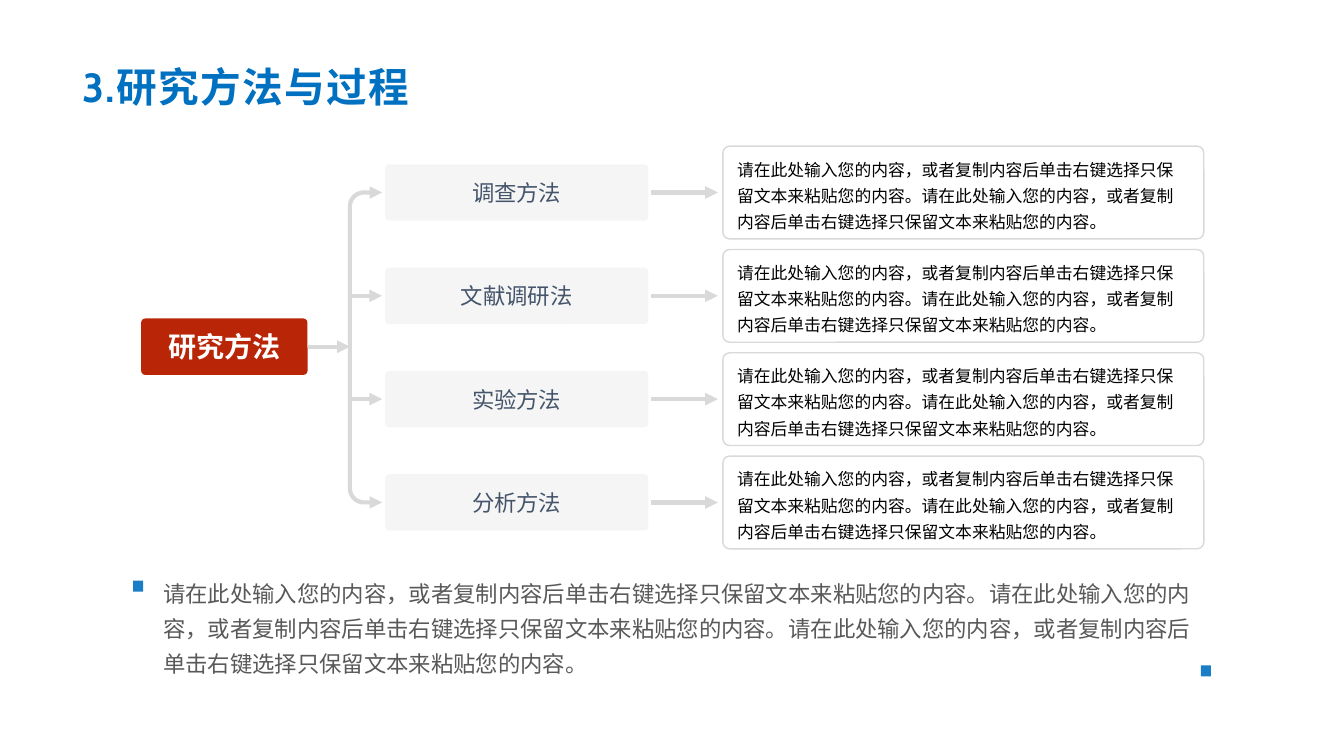
from math import cos, pi, sin

from lxml.etree import SubElement
from pptx import Presentation
from pptx.dml.color import RGBColor
from pptx.enum.shapes import MSO_CONNECTOR as CONN, MSO_SHAPE as SHAPE
from pptx.enum.text import MSO_ANCHOR as ANCHOR, PP_ALIGN as ALIGN
from pptx.oxml.ns import qn
from pptx.util import Inches, Pt

COLORS = {
    "blue": "0070C0", "red": "B92507", "white": "FFFFFF", "black": "000000",
    "pale": "F2F2F2", "line": "D9D9D9", "slate": "44546A", "gray": "595959",
}
SENTENCE = "请在此处输入您的内容，或者复制内容后单击右键选择只保留文本来粘贴您的内容。"
METHODS = ["调查方法", "文献调研法", "实验方法", "分析方法"]
FIRST_Y, ROW_STEP = 1.91, 1.025  # centre of the first row, row pitch
TRUNK_X, BRANCH_X = 3.47, 3.79
BEND = 0.14


class Builder:
    def __init__(self, slide, font="Cabin", cjk_font="Noto Sans CJK JP"):
        self.s = slide
        self.font, self.cjk_font = font, cjk_font

    def rgb(self, name):
        return RGBColor.from_string(COLORS[name])

    def add_run(self, sp, text, size, color, font=None, bold=False, align=ALIGN.LEFT,
                anchor=ANCHOR.TOP, spacing=None, tracking=None, insets=(0, 0)):
        tf = sp.text_frame
        tf.word_wrap = True
        tf.vertical_anchor = anchor
        tf.margin_left = tf.margin_right = Inches(insets[0])
        tf.margin_top = tf.margin_bottom = Inches(insets[1])
        p = tf.paragraphs[0]
        p.alignment = align
        if spacing:
            p.line_spacing = spacing
        r = p.add_run()
        r.text = text
        r.font.size, r.font.bold = Pt(size), bold
        r.font.name = font or self.font
        r.font.color.rgb = self.rgb(color)
        rPr = r.font._element
        SubElement(rPr, qn("a:ea"), typeface=self.font)
        if tracking:
            rPr.set("spc", str(tracking * 100))

    def text(self, x, y, w, h, text, size, color, **style):
        sp = self.s.shapes.add_textbox(Inches(x), Inches(y), Inches(w), Inches(h))
        self.add_run(sp, text, size, color, **style)

    def box(self, kind, x, y, w, h, fill=None, alpha=None, line=None):
        sp = self.s.shapes.add_shape(kind, Inches(x), Inches(y), Inches(w), Inches(h))
        sp.shadow.inherit = False
        if kind == SHAPE.ROUNDED_RECTANGLE:
            sp.adjustments[0] = 0.072
        if fill:
            sp.fill.solid()
            sp.fill.fore_color.rgb = self.rgb(fill)
        else:
            sp.fill.background()
        if alpha:
            clr = sp.fill._xPr.find(".//" + qn("a:srgbClr"))
            SubElement(clr, qn("a:alpha"), val=str(alpha * 1000))
        if line:
            sp.line.color.rgb = self.rgb(line)
            sp.line.width = Pt(1)
        else:
            sp.line.fill.background()
        return sp

    def stroke(self, sp, ends):
        sp.line.color.rgb = self.rgb("line")
        sp.line.width = Pt(3)
        for end in ends:
            SubElement(sp.line._get_or_add_ln(), qn("a:" + end), type="triangle")

    def arrow(self, x1, x2, y):
        c = self.s.shapes.add_connector(CONN.STRAIGHT, Inches(x1), Inches(y),
                                        Inches(x2), Inches(y))
        self.stroke(c, ["tailEnd"])
        SubElement(c._element.spPr, qn("a:effectLst"))

    def bracket(self, x, right, top, bottom, radius, steps=12):
        angles = [pi / 2 * i / steps for i in range(steps + 1)]
        upper = [(x + radius * (1 - sin(a)), top + radius * (1 - cos(a))) for a in angles]
        lower = [(px, top + bottom - py) for px, py in reversed(upper)]
        points = [(Inches(px), Inches(py)) for px, py in upper + lower + [(right, bottom)]]
        fb = self.s.shapes.build_freeform(Inches(right), Inches(top))
        fb.add_line_segments(points, close=False)
        sp = fb.convert_to_shape()
        sp.shadow.inherit = False
        sp.fill.background()
        self.stroke(sp, ["headEnd", "tailEnd"])


def main():
    prs = Presentation()
    prs.slide_width, prs.slide_height = Inches(13.33), Inches(7.5)
    b = Builder(prs.slides.add_slide(prs.slide_layouts[6]))
    centred = {"align": ALIGN.CENTER, "anchor": ANCHOR.MIDDLE}

    # Title
    b.text(0.72, 0.66, 9.09, 0.46, "3.研究方法与过程", 29, "blue", bold=True,
           anchor=ANCHOR.MIDDLE, spacing=0.9, tracking=1, insets=(0.1, 0.05))

    # Summary with its two corner marks
    b.text(1.62, 5.68, 10.29, 1.03, SENTENCE * 3, 16, "gray", spacing=1.3)
    for x, y in [(1.32, 5.76), (11.91, 6.6)]:
        b.box(SHAPE.RECTANGLE, x, y, 0.1, 0.11, "blue", alpha=90)

    # Root and bracket
    root = b.box(SHAPE.ROUNDED_RECTANGLE, 1.4, 3.16, 1.65, 0.56, "red")
    b.add_run(root, "研究方法", 20, "white", bold=True, **centred)
    b.arrow(3.05, TRUNK_X, 3.44)
    rows = [FIRST_Y + i * ROW_STEP for i in range(len(METHODS))]
    b.bracket(TRUNK_X, BRANCH_X, rows[0], rows[-1], BEND)
    for y in rows[1:-1]:
        b.arrow(TRUNK_X, BRANCH_X, y)

    # Method rows
    for method, y in zip(METHODS, rows):
        label = b.box(SHAPE.ROUNDED_RECTANGLE, 3.82, y - 0.28, 2.61, 0.56, "pale", alpha=70)
        b.add_run(label, method, 16, "slate", **centred)
        b.arrow(6.46, 7.12, y)
        b.box(SHAPE.ROUNDED_RECTANGLE, 7.17, y - 0.46, 4.77, 0.92, line="line")
        b.text(7.31, y - 0.39, 4.49, 0.78, SENTENCE * 2, 12, "black",
               font=b.cjk_font, spacing=1.3)

    prs.save("out.pptx")


if __name__ == "__main__":
    main()
